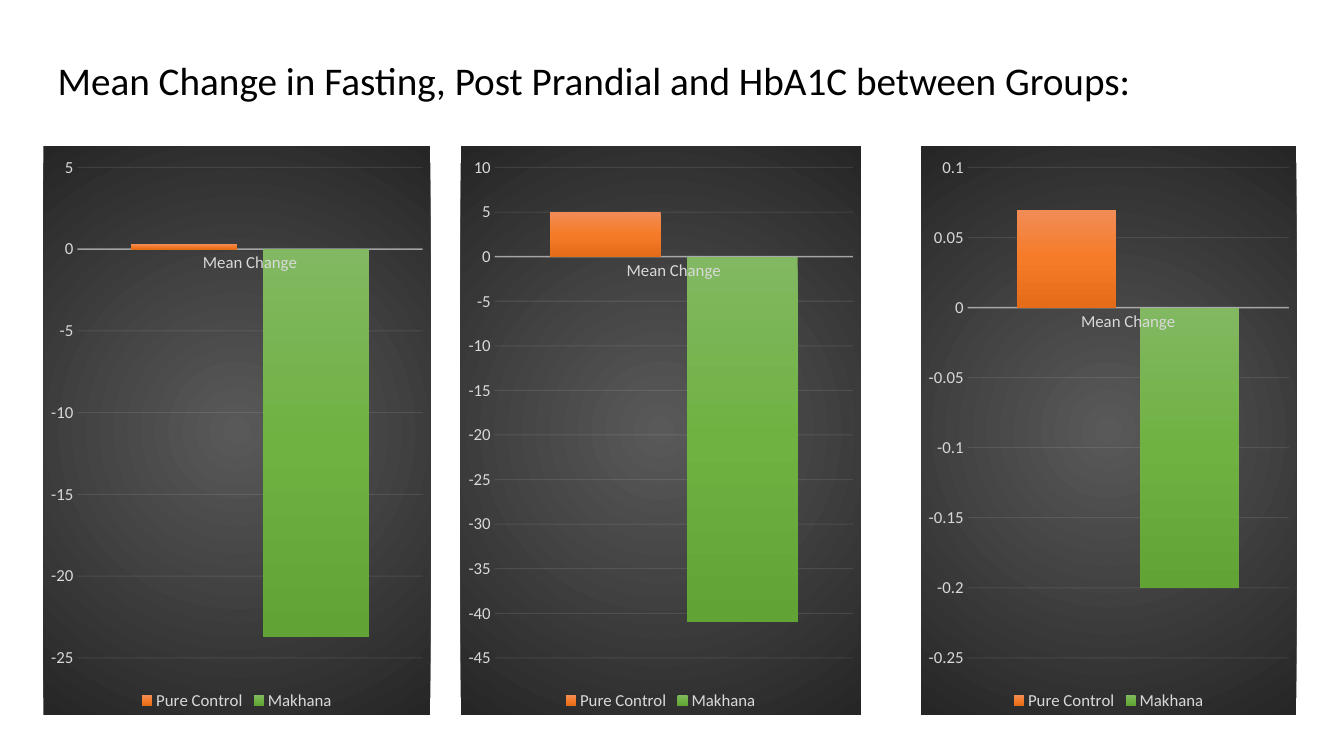
from dataclasses import dataclass

from lxml.etree import SubElement
from pptx import Presentation
from pptx.chart.data import CategoryChartData
from pptx.dml.color import RGBColor
from pptx.enum.chart import XL_CHART_TYPE as ChartType
from pptx.enum.chart import XL_LEGEND_POSITION as LegendPosition
from pptx.enum.chart import XL_TICK_MARK as TickMark
from pptx.enum.text import MSO_ANCHOR as Anchor
from pptx.oxml import parse_xml
from pptx.oxml.ns import nsdecls, qn
from pptx.util import Pt

TITLE = "Mean Change in Fasting, Post Prandial and HbA1C between Groups:"
CATEGORY = "Mean Change"
GROUPS = ("Pure Control", "Makhana")

# left, width, group values, axis minimum, axis maximum, axis step
PANELS = [
    (31, 276.5, (0.3, -23.7), -25, 5, 5),
    (329, 286, (5, -41), -45, 10, 5),
    (658, 268, (0.07, -0.2), -0.25, 0.1, 0.05),
]
PANEL_TOP, PANEL_HEIGHT = 104.4, 406


@dataclass(frozen=True)
class Theme:
    font: str = "Calibri"
    title_size: int = 28
    label_size: int = 12
    title: str = "000000"
    label: str = "D9D9D9"
    line: str = "F2F2F2"
    panel: tuple = ((0, "595959"), (100, "262626"))
    bars: tuple = (
        ((0, "F18C57"), (50, "F67B28"), (100, "E56C19")),
        ((0, "81B861"), (50, "6FB242"), (100, "62A336")),
    )


THEME = Theme()
LINEAR = '<a:lin ang="5400000" scaled="0"/>'
RADIAL = ('<a:path path="circle"><a:fillToRect l="50000" t="50000" '
          'r="50000" b="50000"/></a:path>')


def gradient_properties(stops, direction):
    """Return chart shape properties with a gradient fill and no outline."""
    stop_xml = "".join(
        f'<a:gs pos="{position * 1000}"><a:srgbClr val="{color}"/></a:gs>'
        for position, color in stops)
    return parse_xml(
        f'<c:spPr {nsdecls("c", "a")}><a:gradFill rotWithShape="1">'
        f'<a:gsLst>{stop_xml}</a:gsLst>{direction}</a:gradFill>'
        '<a:ln><a:noFill/></a:ln></c:spPr>')


def style_font(font, size, color):
    font.name = THEME.font
    font.size = Pt(size)
    font.bold = False
    font.color.rgb = RGBColor.from_string(color)


def style_line(line, width, opacity):
    line.width = Pt(width)
    line.color.rgb = RGBColor.from_string(THEME.line)
    color = next(line._ln.iter(qn("a:srgbClr")))
    SubElement(color, qn("a:alpha")).set("val", str(opacity * 1000))


def style_axes(chart, low, high, step):
    for axis in (chart.category_axis, chart.value_axis):
        axis.major_tick_mark = axis.minor_tick_mark = TickMark.NONE
        style_font(axis.tick_labels.font, THEME.label_size, THEME.label)
    style_line(chart.category_axis.format.line, 1, 54)
    values = chart.value_axis
    values.minimum_scale, values.maximum_scale = low, high
    values.major_unit = step
    values.tick_labels.number_format = "General"
    values.tick_labels.number_format_is_linked = False
    values.format.line.fill.background()
    values.has_major_gridlines = True
    style_line(values.major_gridlines.format.line, 0.75, 10)


def add_panel(slide, left, width, changes, low, high, step):
    data = CategoryChartData()
    data.categories = [CATEGORY]
    for group, change in zip(GROUPS, changes):
        data.add_series(group, [change])
    chart = slide.shapes.add_chart(
        ChartType.COLUMN_CLUSTERED, Pt(left), Pt(PANEL_TOP),
        Pt(width), Pt(PANEL_HEIGHT), data).chart
    chart.has_title = False
    style_font(chart.font, THEME.label_size, THEME.label)
    background = gradient_properties(THEME.panel, RADIAL)
    chart._chartSpace.find(qn("c:txPr")).addprevious(background)

    chart.has_legend = True
    chart.legend.position = LegendPosition.BOTTOM
    chart.legend.include_in_layout = False
    style_font(chart.legend.font, THEME.label_size, THEME.label)
    style_axes(chart, low, high, step)

    plot = chart.plots[0]
    plot.vary_by_categories = False
    plot.gap_width, plot.overlap = 100, -24
    for series, stops in zip(plot.series, THEME.bars):
        series.invert_if_negative = False
        series.format.fill.background()
        properties = series._element.find(qn("c:spPr"))
        series._element.replace(properties, gradient_properties(stops, LINEAR))


def add_title(slide):
    box = slide.shapes.title
    box.left, box.top, box.width, box.height = Pt(34), Pt(14.4), Pt(835), Pt(89.3)
    frame = box.text_frame
    frame.word_wrap = True
    frame.vertical_anchor = Anchor.MIDDLE
    para = frame.paragraphs[0]
    para.alignment = 1  # left
    para.line_spacing = 0.9
    span = para.add_run()
    span.text = TITLE
    style_font(span.font, THEME.title_size, THEME.title)


def main():
    deck = Presentation()
    deck.slide_width, deck.slide_height = Pt(960), Pt(540)
    slide = deck.slides.add_slide(deck.slide_layouts[5])
    add_title(slide)
    for panel in PANELS:
        add_panel(slide, *panel)
    deck.save("out.pptx")


if __name__ == "__main__":
    main()
